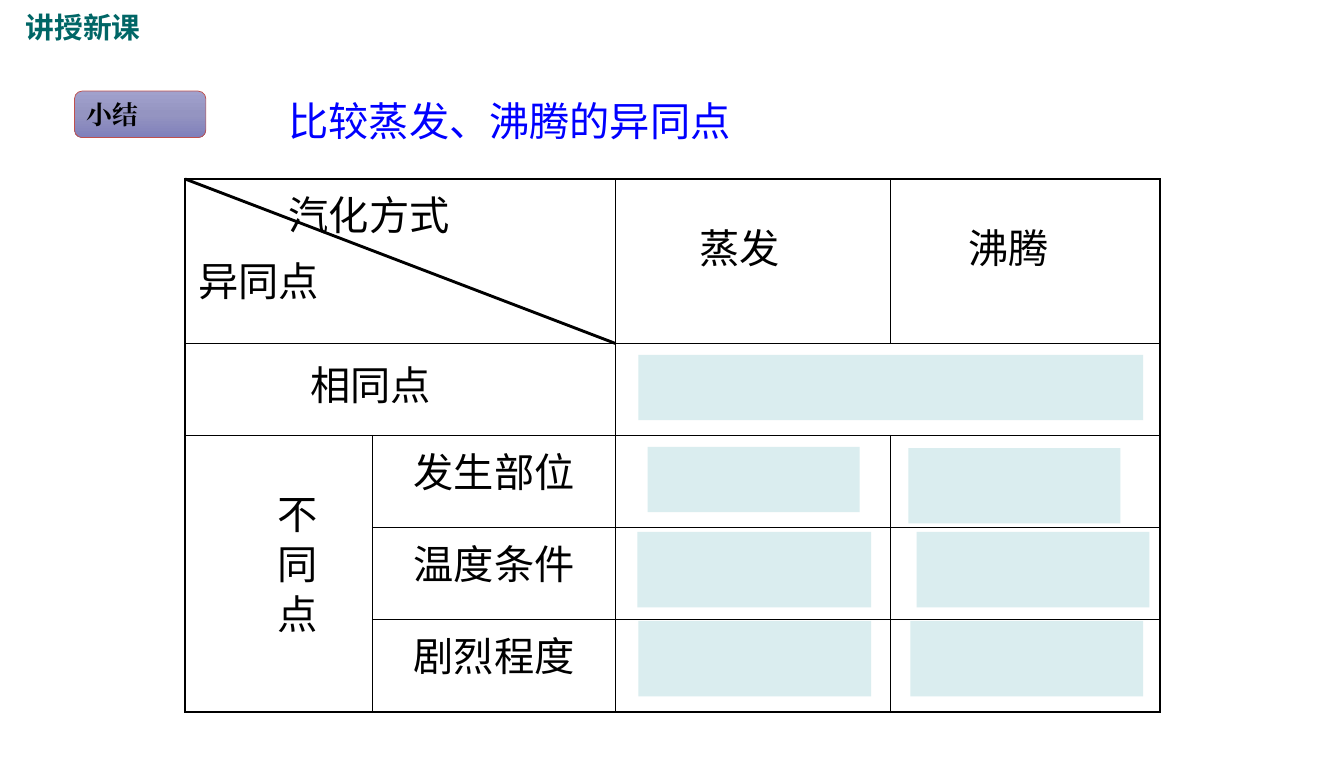
"""Build the summary slide comparing evaporation and boiling."""
from copy import deepcopy
from dataclasses import dataclass

from lxml import etree
from pptx import Presentation
from pptx import util as u
from pptx.dml.color import RGBColor
from pptx.enum import shapes, text
from pptx.oxml import ns

CJK = "Noto Sans CJK SC"
BLACK = "000000"
COLUMNS = [1.81, 2.35, 2.66, 2.6]
ROWS = [1.59] + [0.89] * 4
TABLE_LEFT, TABLE_TOP = 1.79, 1.73


@dataclass
class Label:
    words: str
    left: float
    top: float
    width: float
    height: float = 0.57
    size: float = 28
    font: str = CJK
    color: str = BLACK
    bold: bool = False
    wrap: bool = False
    vertical: bool = False


@dataclass
class Cover:
    left: float
    top: float
    width: float
    height: float = 0.73


LABELS = [
    Label("比较蒸发、沸腾的异同点", 2.69, 0.88, 4.52, color="0000FF"),
    Label("蒸发", 6.66, 2.11, 0.99),
    Label("沸腾", 9.26, 2.11, 0.99),
    Label("相同点", 2.9, 3.43, 1.38),
    Label("不 同 点", 2.48, 4.68, 0.67, 1.66, wrap=True, vertical=True),
    Label("讲授新课", 0.15, 0.05, 1.84, 0.44, 20, "Arial", "006666", True, True),
]
COVERS = [
    Cover(6.26, 4.32, 2.05, 0.63),
    Cover(8.78, 4.33, 2.05),
    Cover(6.16, 5.14, 2.26),
    Cover(8.86, 5.14, 2.25),
    Cover(8.8, 6, 2.25),
    Cover(6.17, 6, 2.25),
    Cover(6.17, 3.43, 4.88, 0.63),
]


def rgb(color: str) -> RGBColor:
    return RGBColor.from_string(color)


def style(frame, size: float = 28, font: str = CJK, color: str = BLACK, bold: bool = False) -> None:
    for paragraph in frame.paragraphs:
        for run in paragraph.runs:
            run.font.size = u.Pt(size)
            run.font.name = font
            run.font.bold = bold
            run.font.color.rgb = rgb(color)
            east_asian = etree.SubElement(run.font._element, ns.qn("a:ea"))
            east_asian.set("typeface", font)


def add_border(cell, side: str, points: float) -> None:
    line = etree.SubElement(cell._tc.get_or_add_tcPr(), ns.qn(f"a:ln{side}"), w=str(u.Pt(points)))
    fill = etree.SubElement(line, ns.qn("a:solidFill"))
    etree.SubElement(fill, ns.qn("a:srgbClr"), val=BLACK)


def add_comparison(slide) -> None:
    table = slide.shapes.add_table(
        len(ROWS), len(COLUMNS), u.Inches(TABLE_LEFT), u.Inches(TABLE_TOP),
        u.Inches(sum(COLUMNS)), u.Inches(sum(ROWS))).table
    table.first_row = table.horz_banding = False
    for column, width in zip(table.columns, COLUMNS):
        column.width = u.Inches(width)
    for row, height in zip(table.rows, ROWS):
        row.height = u.Inches(height)
    for start, end in [((0, 0), (0, 1)), ((1, 0), (1, 1)), ((1, 2), (1, 3)), ((2, 0), (4, 0))]:
        table.cell(*start).merge(table.cell(*end))

    for r in range(len(ROWS)):
        for c in range(len(COLUMNS)):
            cell = table.cell(r, c)
            if not cell.is_spanned:
                outer = {
                    "L": c == 0,
                    "R": c + cell.span_width == len(COLUMNS),
                    "T": r == 0,
                    "B": r + cell.span_height == len(ROWS),
                }
                for side, is_outer in outer.items():
                    add_border(cell, side, 1.5 if is_outer else 1)
            cell.fill.background()
            cell.margin_left = cell.margin_right = u.Inches(0.13)

    corner = table.cell(0, 0).text_frame
    corner.text = "汽化方式\n异同点"
    corner.paragraphs[0]._p.get_or_add_pPr().set("marL", str(u.Inches(0.87)))
    corner.paragraphs[1].space_before = u.Pt(5.6)
    style(corner)
    for r, aspect in enumerate(["发生部位", "温度条件", "剧烈程度"], start=2):
        frame = table.cell(r, 1).text_frame
        frame.text = aspect
        frame.paragraphs[0].alignment = text.PP_ALIGN.CENTER
        style(frame)


def add_diagonal(slide) -> None:
    diagonal = slide.shapes.add_connector(
        shapes.MSO_CONNECTOR.STRAIGHT, u.Inches(TABLE_LEFT), u.Inches(TABLE_TOP),
        u.Inches(TABLE_LEFT + sum(COLUMNS[:2])), u.Inches(TABLE_TOP + ROWS[0]))
    diagonal.line.color.rgb = rgb(BLACK)
    diagonal.line.width = u.Pt(0)
    etree.SubElement(diagonal._element.spPr, ns.qn("a:effectLst"))


def add_label(slide, label: Label) -> None:
    box = slide.shapes.add_textbox(
        u.Inches(label.left), u.Inches(label.top), u.Inches(label.width), u.Inches(label.height))
    frame = box.text_frame
    frame.word_wrap = label.wrap
    frame.auto_size = text.MSO_AUTO_SIZE.SHAPE_TO_FIT_TEXT
    if label.vertical:
        frame._txBody.bodyPr.set("vert", "eaVert")
    frame.text = label.words
    style(frame, label.size, label.font, label.color, label.bold)


def add_block(slide, kind: shapes.MSO_SHAPE, area: Cover):
    block = slide.shapes.add_shape(
        kind, u.Inches(area.left), u.Inches(area.top), u.Inches(area.width), u.Inches(area.height))
    block.shadow.inherit = False
    return block


def add_cover(slide, cover: Cover) -> None:
    block = add_block(slide, shapes.MSO_SHAPE.RECTANGLE, cover)
    block.fill.solid()
    block.fill.fore_color.rgb = rgb("DAEDEF")
    block.line.fill.background()


def add_badge(slide) -> None:
    badge = add_block(slide, shapes.MSO_SHAPE.ROUNDED_RECTANGLE, Cover(0.72, 0.88, 1.27, 0.45))
    badge.fill.gradient()
    badge.fill.gradient_angle = 270
    first = badge.fill.gradient_stops[0]._gs
    first.addnext(deepcopy(first))
    stops = [(0, "A1A1CC"), (0.5, "9494C1"), (1, "8080BB")]
    for stop, (position, color) in zip(badge.fill.gradient_stops, stops):
        stop.position = position
        stop.color.rgb = rgb(color)
    badge.line.color.rgb = rgb("C0504D")
    badge.line.width = u.Pt(0.5)
    frame = badge.text_frame
    frame.text = "小结"
    frame.paragraphs[0].alignment = text.PP_ALIGN.LEFT
    style(frame, 18, "Times New Roman", bold=True)


def main() -> None:
    deck = Presentation()
    deck.slide_width, deck.slide_height = u.Inches(12.99), u.Inches(7.48)
    slide = deck.slides.add_slide(deck.slide_layouts[6])
    add_comparison(slide)
    add_diagonal(slide)
    for label in LABELS:
        add_label(slide, label)
    for cover in COVERS:
        add_cover(slide, cover)
    add_badge(slide)
    deck.save("out.pptx")


if __name__ == "__main__":
    main()
